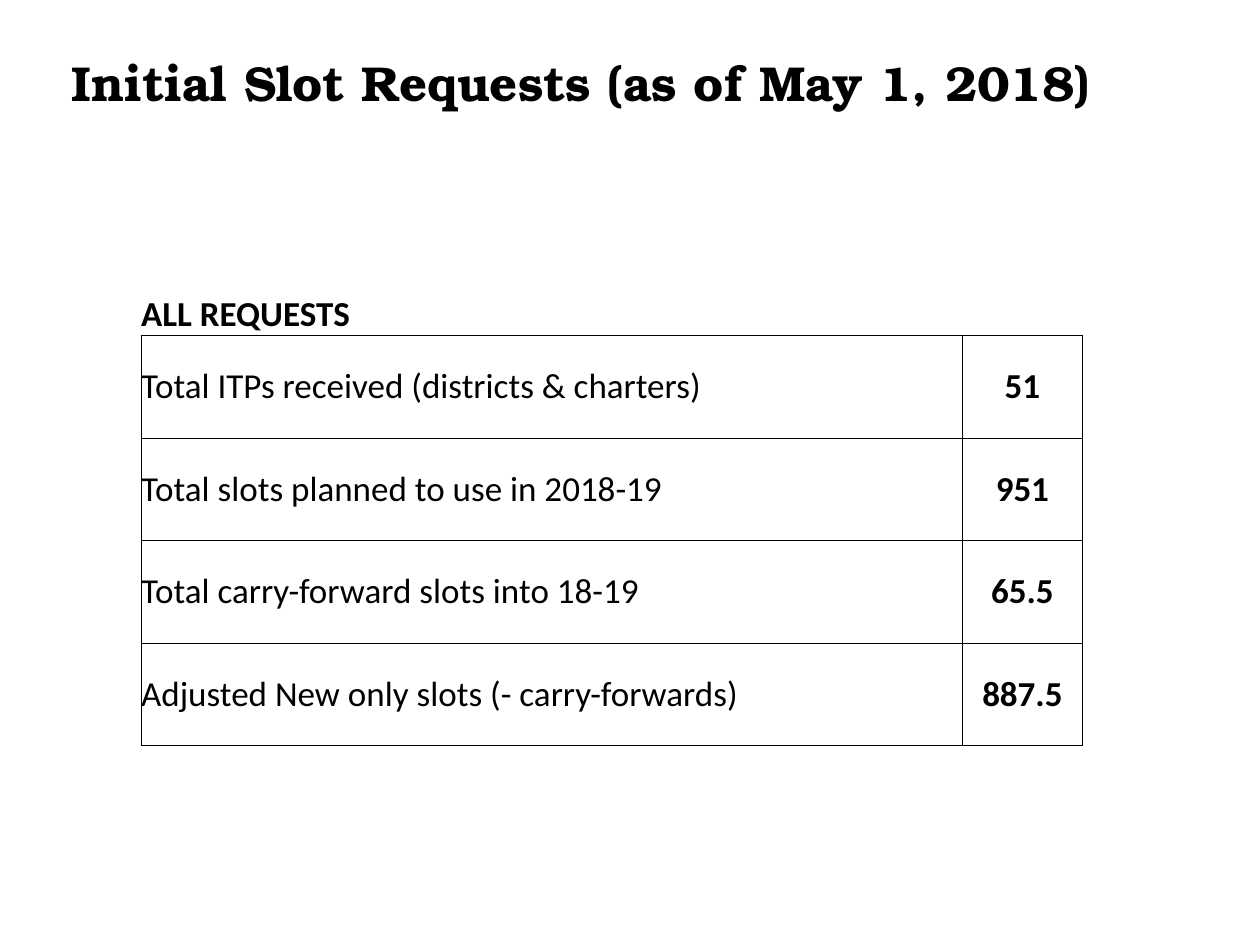
from lxml import etree
from pptx import Presentation
from pptx import util as u
from pptx.dml.color import RGBColor
from pptx.enum import text
from pptx.oxml.ns import qn

TITLE = "Initial Slot Requests (as of May 1, 2018)"
HEADING = "ALL REQUESTS"
REQUESTS = [
    ("Total ITPs received (districts & charters)", "51"),
    ("Total slots planned to use in 2018-19", "951"),
    ("Total carry-forward slots into 18-19", "65.5"),
    ("Adjusted New only slots (- carry-forwards)", "887.5"),
]


class Theme:
    ink = "000000"
    title_font, title_size = "TeX Gyre Bonum", 28
    table_font, table_size = "Calibri", 20
    border_width = 0.5


TITLE_BOX = (0.3, 0.42, 8.62, 0.78)
TABLE_LEFT, TABLE_TOP, TABLE_HEIGHT = 1.12, 1.85, 4.07
COLUMN_WIDTHS = (6.52, 0.95)


def clear_margins(target):
    target.margin_left = target.margin_right = 0
    target.margin_top = target.margin_bottom = 0


def write(frame, content, font_name, size, bold, alignment):
    paragraph = frame.paragraphs[0]
    paragraph.alignment = alignment
    if content:
        run = paragraph.add_run()
        run.text = content
        font = run.font
    else:
        font = paragraph.font
    font.name, font.size, font.bold = font_name, u.Pt(size), bold
    font.color.rgb = RGBColor.from_string(Theme.ink)


def set_borders(cell, visible):
    """Draw the sides named in visible (letters of LRTB) and hide the others."""
    properties = cell._tc.get_or_add_tcPr()
    for position, side in enumerate("LRTB"):
        line = etree.Element(qn(f"a:ln{side}"), w=str(u.Pt(Theme.border_width)))
        if side in visible:
            fill = etree.SubElement(line, qn("a:solidFill"))
            etree.SubElement(fill, qn("a:srgbClr"), val=Theme.ink)
        else:
            etree.SubElement(line, qn("a:noFill"))
        properties.insert(position, line)


def add_title(slide):
    box = slide.shapes.add_textbox(*map(u.Inches, TITLE_BOX))
    frame = box.text_frame
    frame.word_wrap = True
    clear_margins(frame)
    write(frame, TITLE, Theme.title_font, Theme.title_size, True, text.PP_ALIGN.CENTER)


def add_request_table(slide):
    rows = [(HEADING, "")] + REQUESTS
    table = slide.shapes.add_table(
        len(rows), len(COLUMN_WIDTHS), u.Inches(TABLE_LEFT), u.Inches(TABLE_TOP),
        u.Inches(sum(COLUMN_WIDTHS)), u.Inches(TABLE_HEIGHT)).table
    table.first_row = table.horz_banding = False
    for column, width in zip(table.columns, COLUMN_WIDTHS):
        column.width = u.Inches(width)
    for row_index, row in enumerate(rows):
        is_heading = row_index == 0
        for column_index, content in enumerate(row):
            is_value = column_index == 1
            cell = table.cell(row_index, column_index)
            clear_margins(cell)
            cell.vertical_anchor = (text.MSO_ANCHOR.BOTTOM if is_heading
                                    else text.MSO_ANCHOR.MIDDLE)
            cell.fill.background()
            set_borders(cell, "B" if is_heading else "LRTB")
            write(cell.text_frame, content, Theme.table_font, Theme.table_size,
                  is_heading or is_value,
                  text.PP_ALIGN.CENTER if is_value else text.PP_ALIGN.LEFT)


def main():
    presentation = Presentation()
    presentation.slide_width, presentation.slide_height = u.Inches(10), u.Inches(7.5)
    slide = presentation.slides.add_slide(presentation.slide_layouts[6])
    add_title(slide)
    add_request_table(slide)
    presentation.save("out.pptx")


if __name__ == "__main__":
    main()
